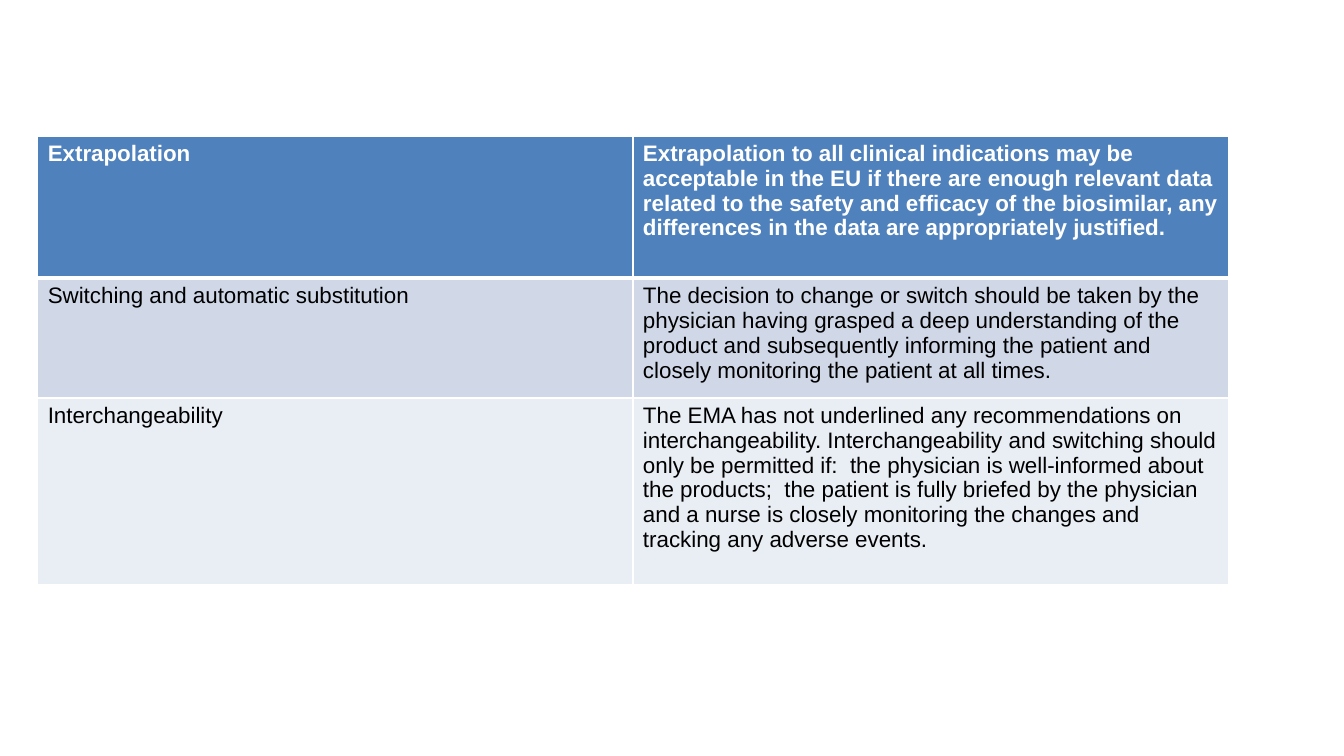
from dataclasses import dataclass

from lxml import etree
from pptx import Presentation
from pptx.dml.color import RGBColor
from pptx.enum.text import MSO_ANCHOR, PP_ALIGN
from pptx.oxml.ns import qn
from pptx.slide import Slide
from pptx.table import _Cell
from pptx.util import Cm, Pt

LEFT = PP_ALIGN.LEFT
TOP = MSO_ANCHOR.TOP
BLANK_LAYOUT = 6


@dataclass(frozen=True)
class Theme:
    font: str = "Arial"
    text_size: float = 16
    header_fill: str = "4F81BD"
    dark_band: str = "D0D8E8"
    light_band: str = "E9EDF4"
    white: str = "FFFFFF"
    black: str = "000000"
    thin_border: float = 1
    header_border: float = 3


THEME = Theme()


@dataclass(frozen=True)
class Topic:
    name: str
    position: str
    height: float
    fill: str
    text_color: str = THEME.black
    bold: bool = False
    top_border: float = THEME.thin_border
    bottom_border: float = THEME.thin_border


TOPICS = [
    Topic(
        "Extrapolation",
        "Extrapolation to all clinical indications may be acceptable in the EU "
        "if there are enough relevant data related to the safety and efficacy of "
        "the biosimilar, any differences in the data are appropriately justified.",
        3.58, THEME.header_fill, THEME.white, bold=True,
        bottom_border=THEME.header_border,
    ),
    Topic(
        "Switching and automatic substitution",
        "The decision to change or switch should be taken by the physician "
        "having grasped a deep understanding of the product and subsequently "
        "informing the patient and closely monitoring the patient at all times.",
        3.02, THEME.dark_band, top_border=THEME.header_border,
    ),
    Topic(
        "Interchangeability",
        "The EMA has not underlined any recommendations on interchangeability. "
        "Interchangeability and switching should only be permitted if:  the "
        "physician is well-informed about the products;  the patient is fully "
        "briefed by the physician and a nurse is closely monitoring the changes "
        "and tracking any adverse events.",
        4.7, THEME.light_band,
    ),
]

TABLE_LEFT, TABLE_TOP = 0.95, 3.43
COLUMN_WIDTH = 15


def add_borders(cell: _Cell, topic: Topic) -> None:
    """Draw white rules; border elements come before the fill."""
    widths = {
        "a:lnL": THEME.thin_border,
        "a:lnR": THEME.thin_border,
        "a:lnT": topic.top_border,
        "a:lnB": topic.bottom_border,
    }
    properties = cell._tc.get_or_add_tcPr()
    for position, (tag, width) in enumerate(widths.items()):
        rule = etree.Element(qn(tag), w=str(Pt(width)))
        fill = etree.SubElement(rule, qn("a:solidFill"))
        etree.SubElement(fill, qn("a:srgbClr"), val=THEME.white)
        properties.insert(position, rule)


def fill_cell(cell: _Cell, text: str, topic: Topic) -> None:
    cell.text = text
    cell.vertical_anchor = TOP
    cell.fill.solid()
    cell.fill.fore_color.rgb = RGBColor.from_string(topic.fill)
    add_borders(cell, topic)

    paragraph = cell.text_frame.paragraphs[0]
    paragraph.alignment = LEFT
    font = paragraph.runs[0].font
    font_format = {"name": THEME.font, "size": Pt(THEME.text_size), "bold": topic.bold}
    for attribute, value in font_format.items():
        setattr(font, attribute, value)
    font.color.rgb = RGBColor.from_string(topic.text_color)


def add_topic_table(slide: Slide, topics: list[Topic]) -> None:
    total_height = sum(topic.height for topic in topics)
    table = slide.shapes.add_table(
        len(topics), 2, Cm(TABLE_LEFT), Cm(TABLE_TOP),
        Cm(2 * COLUMN_WIDTH), Cm(total_height),
    ).table
    for column in table.columns:
        column.width = Cm(COLUMN_WIDTH)
    for row, topic in zip(table.rows, topics):
        row.height = Cm(topic.height)
        for cell, text in zip(row.cells, (topic.name, topic.position)):
            fill_cell(cell, text, topic)


def main() -> None:
    presentation = Presentation()
    presentation.slide_width = Cm(33.87)
    presentation.slide_height = Cm(19.05)
    slide = presentation.slides.add_slide(presentation.slide_layouts[BLANK_LAYOUT])

    # Regulatory position on each biosimilar topic
    add_topic_table(slide, TOPICS)

    presentation.save("out.pptx")


if __name__ == "__main__":
    main()
